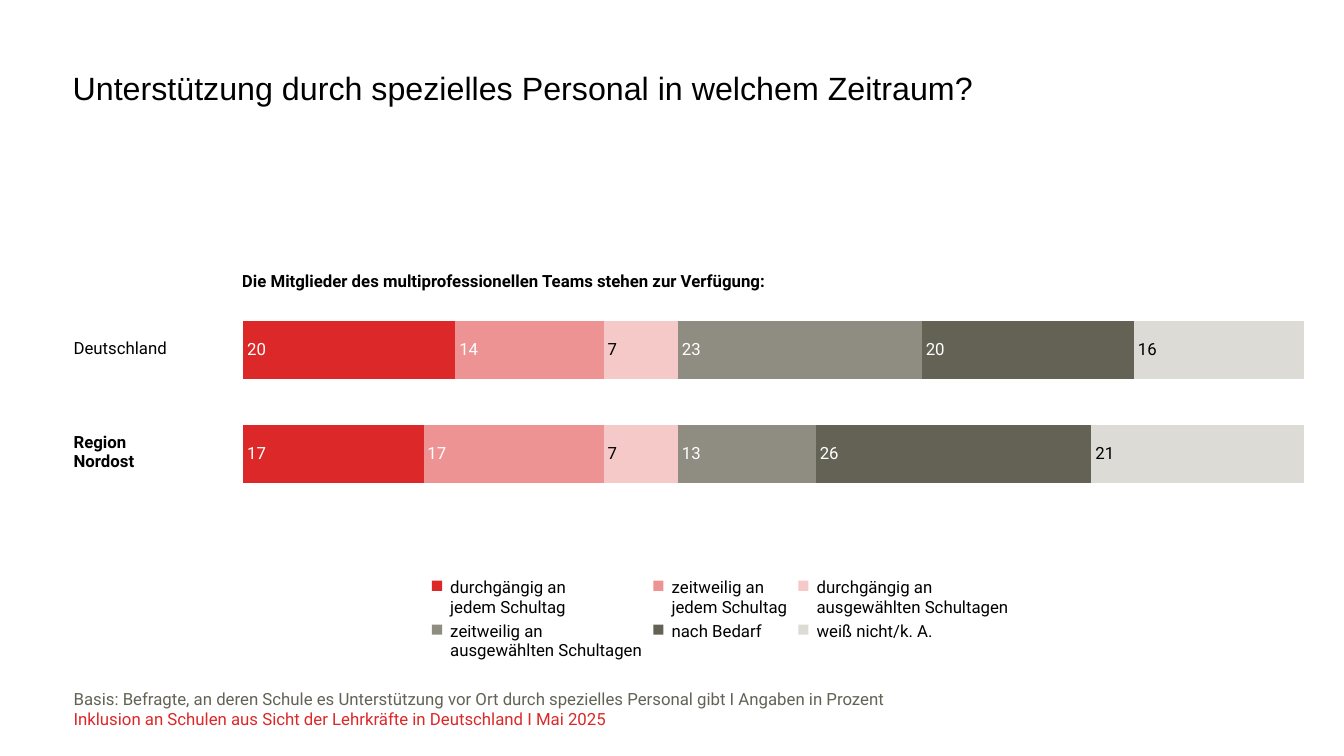
import lxml.etree
import pptx
import pptx.chart.data
import pptx.dml.color
import pptx.enum.chart
import pptx.enum.text
import pptx.oxml
import pptx.oxml.ns
import pptx.util

Inches = pptx.util.Inches
Anchor = pptx.enum.text.MSO_ANCHOR

theme = {
    "title_font": "Arial",
    "body_font": "Roboto",
    "title_size": pptx.util.Pt(23),
    "body_size": pptx.util.Pt(12),
    "black": "000000",
    "white": "FFFFFF",
    "red": "DC2828",
    "rose": "ED9393",
    "blush": "F6C9C9",
    "stone": "8F8D81",
    "olive": "636255",
    "sand": "DCDBD5",
}
body_format = {"name": theme["body_font"], "size": theme["body_size"], "bold": False}
title_format = {"name": theme["title_font"], "size": theme["title_size"], "bold": False}
no_margins = {"margin_left": 0, "margin_right": 0, "margin_top": 0, "margin_bottom": 0}


def format_font(font, color, values):
    for name, value in values.items():
        setattr(font, name, value)
    font.color.rgb = pptx.dml.color.RGBColor.from_string(theme[color])


def add_label_table(slide, left, top, width, row_height, anchor, labels):
    frame = slide.shapes.add_table(
        len(labels), 1, Inches(left), Inches(top), Inches(width), Inches(row_height * len(labels))
    )
    table = frame.table
    table.first_row = False
    table.horz_banding = False
    for row, (text, bold, spacing) in enumerate(labels):
        cell = table.cell(row, 0)
        cell.fill.background()
        cell.text = text
        for name, value in {**no_margins, "vertical_anchor": anchor}.items():
            setattr(cell, name, value)
        paragraph = cell.text_frame.paragraphs[0]
        paragraph.line_spacing = spacing
        format_font(paragraph.runs[0].font, "black", {**body_format, "bold": bold})


presentation = pptx.Presentation()
presentation.slide_width = Inches(13.33)
presentation.slide_height = Inches(7.5)
slide = presentation.slides.add_slide(presentation.slide_layouts[5])

title = slide.shapes.title
title_box = {"left": 0.72, "top": 0.72, "width": 12.21, "height": 0.91}
for name, value in title_box.items():
    setattr(title, name, Inches(value))
title.text_frame.text = "Unterstützung durch spezielles Personal in welchem Zeitraum?"
for name, value in {**no_margins, "vertical_anchor": Anchor.TOP, "word_wrap": True}.items():
    setattr(title.text_frame, name, value)
paragraph = title.text_frame.paragraphs[0]
paragraph.alignment = pptx.enum.text.PP_ALIGN.LEFT
paragraph.line_spacing = 0.9
format_font(paragraph.runs[0].font, "black", title_format)

availability = [
    (" durchgängig an\n jedem Schultag", (20, 17), "red", "white"),
    (" zeitweilig an\n jedem Schultag", (14, 17), "rose", "white"),
    (" durchgängig an\n ausgewählten Schultagen", (7, 7), "blush", "black"),
    (" zeitweilig an\n ausgewählten Schultagen", (23, 13), "stone", "white"),
    (" nach Bedarf", (20, 26), "olive", "white"),
    (" weiß nicht/k. A.", (16, 21), "sand", "black"),
]
chart_data = pptx.chart.data.CategoryChartData()
chart_data.categories = ["1", "2"]
for name, values, fill, label_color in availability:
    chart_data.add_series(name, values)
chart = slide.shapes.add_chart(
    pptx.enum.chart.XL_CHART_TYPE.BAR_STACKED,
    Inches(1.36), Inches(2.08), Inches(11.57), Inches(4.52), chart_data,
).chart
chart.has_title = False
format_font(chart.font, "black", body_format)

chart.has_legend = True
chart.legend.position = pptx.enum.chart.XL_LEGEND_POSITION.BOTTOM
chart.legend.include_in_layout = False
format_font(chart.legend.font, "black", body_format)

category_axis = chart.category_axis
category_axis.reverse_order = True
category_axis.visible = False
value_axis = chart.value_axis
axis_format = {
    "minimum_scale": 0,
    "maximum_scale": 100,
    "major_unit": 20,
    "has_major_gridlines": False,
    "visible": False,
}
for name, value in axis_format.items():
    setattr(value_axis, name, value)

plot = chart.plots[0]
plot.gap_width = 80
plot.overlap = 100
plot.vary_by_categories = False
for series, (name, values, fill, label_color) in zip(plot.series, availability):
    series.format.fill.solid()
    series.format.fill.fore_color.rgb = pptx.dml.color.RGBColor.from_string(theme[fill])
    labels = series.data_labels
    labels.show_value = True
    labels.position = pptx.enum.chart.XL_LABEL_POSITION.INSIDE_BASE
    format_font(labels.font, label_color, body_format)

qualified = pptx.oxml.ns.qn
plot_area = chart.element.find(".//" + qualified("c:plotArea"))
for layout in plot_area.findall(qualified("c:layout")):
    plot_area.remove(layout)
layout = lxml.etree.Element(qualified("c:layout"))
manual = lxml.etree.SubElement(layout, qualified("c:manualLayout"))
plot_layout = {
    "layoutTarget": "inner", "xMode": "edge", "yMode": "edge",
    "x": "0.091", "y": "0.194", "w": "0.909", "h": "0.456",
}
for name, value in plot_layout.items():
    lxml.etree.SubElement(manual, qualified("c:" + name)).set("val", value)
plot_area.insert(0, layout)

footer = slide.shapes.add_textbox(Inches(0.73), Inches(6.64), Inches(11.09), Inches(0.59))
footer_frame = footer.text_frame
for name, value in {**no_margins, "vertical_anchor": Anchor.BOTTOM, "word_wrap": True}.items():
    setattr(footer_frame, name, value)
footer_lines = [
    ("Basis: Befragte, an deren Schule es Unterstützung vor Ort durch spezielles Personal gibt I Angaben in Prozent", "olive", 0.85),
    ("Inklusion an Schulen aus Sicht der Lehrkräfte in Deutschland I Mai 2025", "red", 1.0),
]
footer_frame.text = "\n".join(text for text, color, spacing in footer_lines)
for paragraph, (text, color, spacing) in zip(footer_frame.paragraphs, footer_lines):
    paragraph.line_spacing = spacing
    format_font(paragraph.runs[0].font, color, body_format)

add_label_table(slide, 2.4, 2.67, 10.54, 0.22, Anchor.BOTTOM, [
    ("Die Mitglieder des multiprofessionellen Teams stehen zur Verfügung:", True, 0.85),
])
add_label_table(slide, 0.73, 2.94, 1.11, 1.03, Anchor.MIDDLE, [
    ("Deutschland", False, 1.0),
    ("Region Nordost", True, 1.0),
])

presentation.save("out.pptx")
